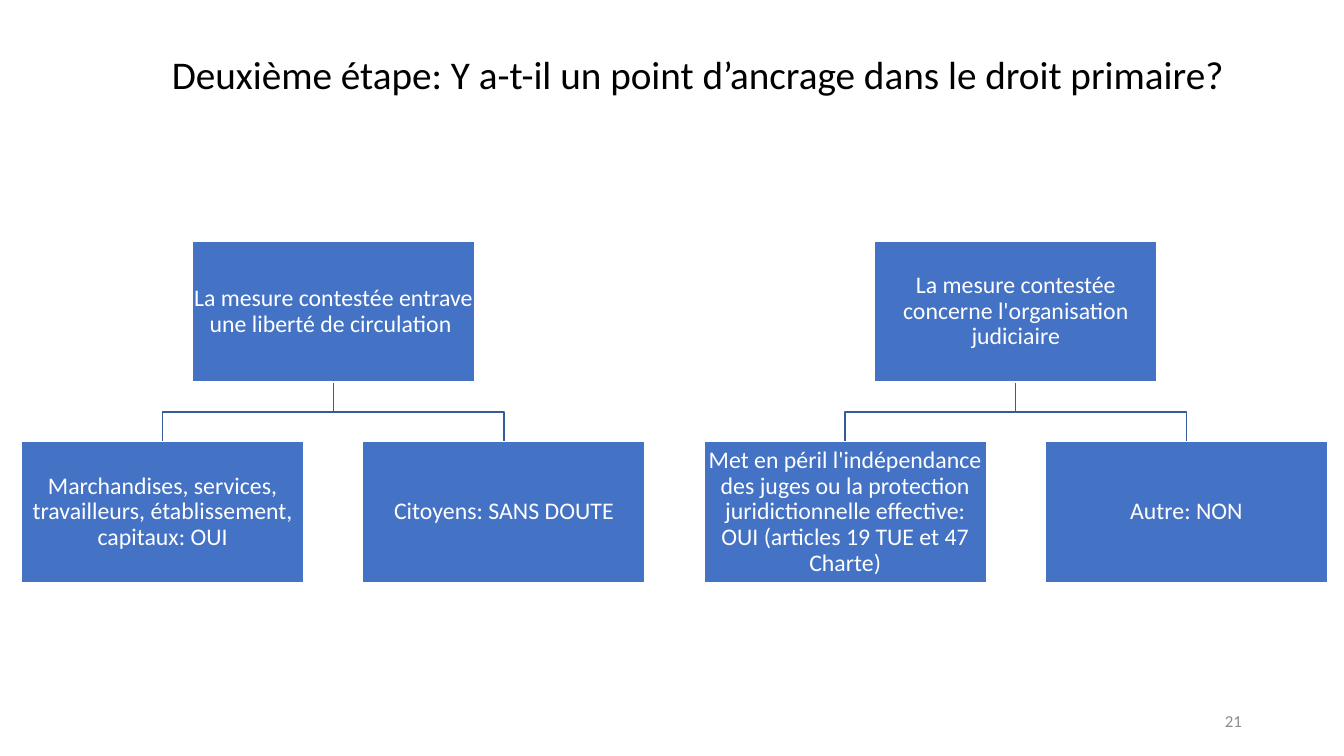
from dataclasses import dataclass

from pptx import Presentation
from pptx import util as u
from pptx.dml.color import RGBColor
from pptx.enum import shapes, text


@dataclass(frozen=True)
class Theme:
    """Colours, font and type sizes of the deck."""
    font: str = "Calibri"
    box_fill: str = "4472C4"
    box_text: str = "FFFFFF"
    branch: str = "365B9D"
    title: str = "000000"
    number: str = "8C8C8C"
    title_size: int = 28
    box_size: int = 17
    number_size: int = 12
    line_width: int = 1


@dataclass(frozen=True)
class Box:
    """A rectangle measured in centimetres."""
    left: float
    top: float
    width: float
    height: float

    def lengths(self):
        """Return the rectangle as slide lengths."""
        return [u.Cm(v) for v in (self.left, self.top, self.width, self.height)]


THEME = Theme()
NODE_WIDTH, NODE_HEIGHT = 7.12, 3.56
PITCH = 8.6
TREES = [
    ("La mesure contestée entrave une liberté de circulation ",
     ["Marchandises, services, travailleurs, établissement, capitaux: OUI",
      "Citoyens: SANS DOUTE"]),
    ("La mesure contestée concerne l'organisation judiciaire",
     ["Met en péril l'indépendance des juges ou la protection juridictionnelle "
      "effective: OUI (articles 19 TUE et 47 Charte)",
      "Autre: NON"]),
]


def write(shape, words, size, color, align):
    """Write one paragraph into a shape."""
    shape.text_frame.word_wrap = True
    para = shape.text_frame.paragraphs[0]
    para.alignment = align
    span = para.add_run()
    span.text = words
    span.font.name = THEME.font
    span.font.size = u.Pt(size)
    span.font.color.rgb = RGBColor.from_string(color)
    return para


def add_label(page, box, words, size, color, align, anchor):
    """Add a text box for the title or the page number."""
    label = page.shapes.add_textbox(*box.lengths())
    label.text_frame.vertical_anchor = anchor
    write(label, words, size, color, align)


def add_branch(page, parent, child):
    """Draw the bent line from a parent box down to a child box."""
    start_x = u.Cm(parent.left + parent.width / 2)
    start_y = u.Cm(parent.top + parent.height)
    end_x, end_y = u.Cm(child.left + child.width / 2), u.Cm(child.top)
    middle = (start_y + end_y) // 2
    builder = page.shapes.build_freeform(start_x, start_y)
    builder.add_line_segments(
        [(start_x, middle), (end_x, middle), (end_x, end_y)], close=False)
    branch = builder.convert_to_shape()
    branch.shadow.inherit = False
    branch.fill.background()
    branch.line.color.rgb = RGBColor.from_string(THEME.branch)
    branch.line.width = u.Pt(THEME.line_width)


def add_node(page, box, words):
    """Add one filled box of a tree."""
    node = page.shapes.add_shape(shapes.MSO_SHAPE.RECTANGLE, *box.lengths())
    node.shadow.inherit = False
    node.fill.solid()
    node.fill.fore_color.rgb = RGBColor.from_string(THEME.box_fill)
    node.line.color.rgb = RGBColor.from_string(THEME.box_text)
    node.line.width = u.Pt(THEME.line_width)
    frame = node.text_frame
    frame.vertical_anchor = text.MSO_ANCHOR.MIDDLE
    frame.margin_left = frame.margin_right = u.Cm(0.03)
    frame.margin_top = frame.margin_bottom = u.Cm(0.03)
    para = write(node, words, THEME.box_size, THEME.box_text, text.PP_ALIGN.CENTER)
    para.line_spacing = 0.9


def add_tree(page, box, question, answers):
    """Add a question box centred above its row of answer boxes."""
    indent = PITCH * (len(answers) - 1) / 2
    parent = Box(box.left + indent, box.top, NODE_WIDTH, NODE_HEIGHT)
    row_top = box.top + box.height - NODE_HEIGHT
    children = [Box(box.left + i * PITCH, row_top, NODE_WIDTH, NODE_HEIGHT)
                for i in range(len(answers))]
    for child in children:
        add_branch(page, parent, child)
    add_node(page, parent, question)
    for child, answer in zip(children, answers):
        add_node(page, child, answer)


def build_page(deck):
    """Build the slide with its title, two trees and page number."""
    page = deck.slides.add_slide(deck.slide_layouts[6])
    column = 0
    for question, answers in TREES:
        width = PITCH * (len(answers) - 1) + NODE_WIDTH
        box = Box(0.54 + column * PITCH, 6.07, width, 8.62)
        add_tree(page, box, question, answers)
        column += len(answers)
    add_label(page, Box(23.93, 17.65, 7.62, 1.01), "21", THEME.number_size,
              THEME.number, text.PP_ALIGN.RIGHT, text.MSO_ANCHOR.MIDDLE)
    add_label(page, Box(3.05, 1.14, 29.06, 1.45),
              "Deuxième étape: Y a-t-il un point d’ancrage dans le droit primaire?",
              THEME.title_size, THEME.title, text.PP_ALIGN.CENTER,
              text.MSO_ANCHOR.TOP)


def main():
    """Create and save the deck."""
    deck = Presentation()
    deck.slide_width, deck.slide_height = u.Cm(33.87), u.Cm(19.05)
    build_page(deck)
    deck.save("out.pptx")


if __name__ == "__main__":
    main()
